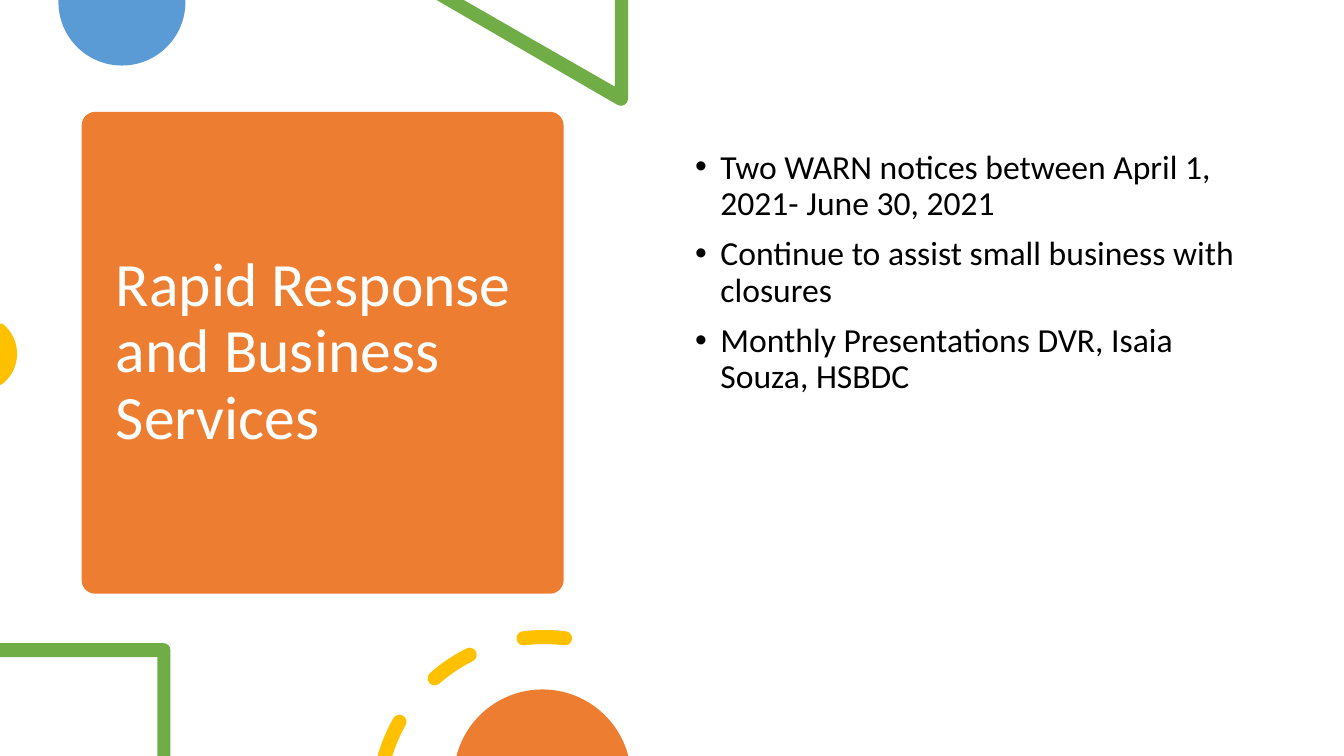
from math import ceil, cos, radians, sin, tan

from lxml import etree
from pptx import Presentation
from pptx import util as u
from pptx.dml.color import RGBColor
from pptx.enum import shapes, text
from pptx.oxml.ns import qn

ORANGE, BLUE, GREEN, AMBER = "ED7D31", "5B9BD5", "70AD47", "FFC000"
WIDTH, HEIGHT = 13.33, 7.5


def arc(x, y, radius, start, end):
    """Curve steps in inches (control, control, point), clockwise from the right.

    The first step is the plain point where the arc begins.
    """
    pieces = ceil(abs(end - start) / 90)
    turn = radians(end - start) / pieces
    pull = 4 / 3 * tan(turn / 4)
    steps = [((x + radius * cos(radians(start)), y + radius * sin(radians(start))),)]
    for i in range(pieces):
        a = radians(start) + turn * i
        b = a + turn
        steps.append((
            (x + radius * (cos(a) - pull * sin(a)), y + radius * (sin(a) + pull * cos(a))),
            (x + radius * (cos(b) + pull * sin(b)), y + radius * (sin(b) - pull * cos(b))),
            (x + radius * cos(b), y + radius * sin(b))))
    return steps


def paint(shape, color):
    shape.shadow.inherit = False
    shape.fill.solid()
    shape.fill.fore_color.rgb = RGBColor.from_string(color)
    shape.line.fill.background()


deck = Presentation()
deck.slide_width, deck.slide_height = u.Inches(WIDTH), u.Inches(HEIGHT)
page = deck.slides.add_slide(deck.slide_layouts[0])
title, body = page.placeholders

# Card behind the title
card = page.shapes.add_shape(
    shapes.MSO_SHAPE.ROUNDED_RECTANGLE, *map(u.Inches, (0.81, 1.11, 4.78, 4.78)))
card.adjustments[0] = 0.028
paint(card, ORANGE)
title.element.addprevious(card.element)

# Title and bullet list
contents = [
    (title, (1.05, 1.22, 4.31, 4.56), 0.05, text.MSO_ANCHOR.MIDDLE, 44, "FFFFFF", 0,
     ["Rapid Response and Business Services"]),
    (body, (6.67, 0.9, 5.75, 5.35), 0.59, text.MSO_ANCHOR.TOP, 24, "000000", 10,
     ["Two WARN notices between April 1, 2021- June 30, 2021",
      "Continue to assist small business with closures",
      "Monthly Presentations DVR, Isaia Souza, HSBDC"]),
]
for box, place, top_margin, anchor, size, color, gap, lines in contents:
    box.left, box.top, box.width, box.height = map(u.Inches, place)
    frame = box.text_frame
    frame.text = "\n".join(lines)
    frame_format = {"word_wrap": True, "auto_size": text.MSO_AUTO_SIZE.NONE,
                    "vertical_anchor": anchor, "margin_top": u.Inches(top_margin)}
    for name, value in frame_format.items():
        setattr(frame, name, value)
    para_format = {"alignment": text.PP_ALIGN.LEFT, "line_spacing": 0.9,
                   "space_before": u.Pt(gap)}
    font_format = {"name": "Calibri", "size": u.Pt(size), "bold": False}
    for para in frame.paragraphs:
        for name, value in para_format.items():
            setattr(para, name, value)
        span = para.runs[0]
        for name, value in font_format.items():
            setattr(span.font, name, value)
        span.font.color.rgb = RGBColor.from_string(color)
        if box is body:
            props = para._p.get_or_add_pPr()
            props.set("marL", str(u.Inches(0.375)))
            props.set("indent", str(u.Inches(-0.25)))
            etree.SubElement(props, qn("a:buFont"), typeface="Arial")
            etree.SubElement(props, qn("a:buChar"), char="•")

# Dashed ring: round-ended bands, the first one cut by the slide's bottom edge
ring_x, ring_y, ring_radius, half = 5.4, 7.97, 1.65, 0.07
dashes = []
for start, end, inner_start in [(195.8, 209.4, 197.3), (228.7, 243.3, None),
                                (262.8, 277.1, None)]:
    tail, head = [(ring_x + ring_radius * cos(radians(a)),
                   ring_y + ring_radius * sin(radians(a))) for a in (start, end)]
    dash = arc(ring_x, ring_y, ring_radius + half, start, end)
    dash += arc(*head, half, end, end + 180)[1:]
    dash += arc(ring_x, ring_y, ring_radius - half, end, inner_start or start)[1:]
    if inner_start is None:
        dash += arc(*tail, half, start + 180, start + 360)[1:]
    dashes.append(dash)

# Decorations cropped by the slide edges; a one-point step is a straight line
circle = [((1.84, 0),), ((0.58, 0),), *arc(1.21, 0.02, 0.63, 180, 0)]
triangle = [((6.23, 0),), ((6.1, 0),), ((6.1, 0.86),), ((4.6, 0),), ((4.33, 0),),
            *arc(6.16, 0.98, 0.07, 120, 0)]
half_dot = [((0, 3.21),), ((0, 3.82),), *arc(-0.21, 3.51, 0.38, 52, -52)]
corner = [((0, 6.38),), ((0, 6.52),), ((1.56, 6.52),), ((1.56, HEIGHT),),
          ((1.69, HEIGHT),), *arc(1.62, 6.45, 0.07, 360, 270)]
dome = arc(5.38, 7.72, 0.88, 194.5, 345.5)
decorations = [([circle], BLUE), ([triangle], GREEN), ([half_dot], AMBER),
               ([corner], GREEN), (dashes, AMBER), ([dome], ORANGE)]
for outlines, color in decorations:
    builder = None
    for outline in outlines:
        points = [(u.Inches(x), u.Inches(y)) for *_, (x, y) in outline]
        if builder is None:
            builder = page.shapes.build_freeform(*points[0], scale=1.0)
        else:
            builder.move_to(*points[0])
        builder.add_line_segments(points[1:], close=False)
    shape = builder.convert_to_shape()
    paint(shape, color)

    # Bend the straight segments that have control points and close each outline
    segments = list(shape.element.iter(qn("a:moveTo"), qn("a:lnTo")))
    for segment, step in zip(segments, [step for outline in outlines for step in outline]):
        if len(step) == 3:
            segment.tag = qn("a:cubicBezTo")
            for i, (x, y) in enumerate(step[:2]):
                control = etree.Element(qn("a:pt"), x=str(u.Inches(x) - shape.left),
                                        y=str(u.Inches(y) - shape.top))
                segment.insert(i, control)
        following = segment.getnext()
        if following is None or following.tag == qn("a:moveTo"):
            segment.addnext(etree.Element(qn("a:close")))

deck.save("out.pptx")
